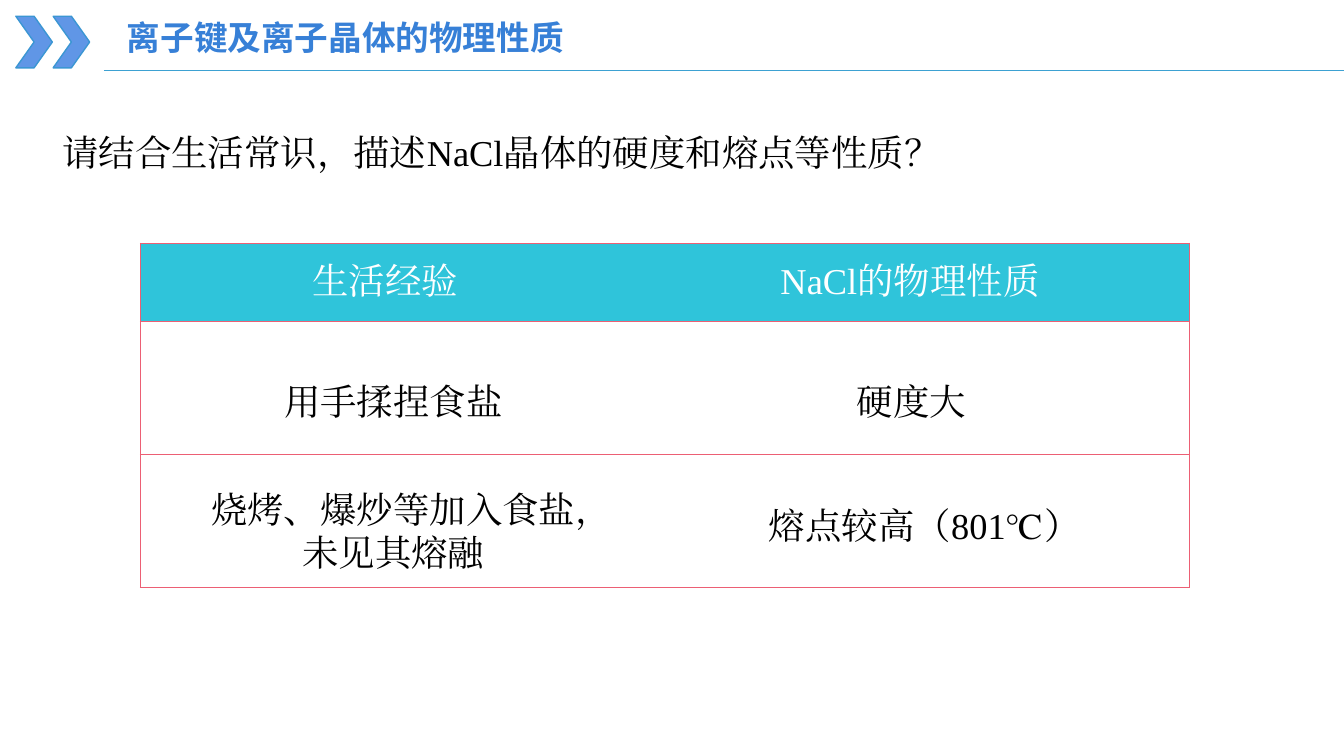
from dataclasses import dataclass

from lxml.etree import SubElement as Sub
from pptx import Presentation
from pptx.dml.color import RGBColor as Rgb
from pptx.enum.shapes import MSO_CONNECTOR as Conn, MSO_SHAPE as Shape
from pptx.enum.text import MSO_ANCHOR as Anchor, PP_ALIGN as Align
from pptx.oxml.ns import qn
from pptx.util import Cm, Pt

HUES = {
    "chevron": "6096E6", "edge": "3B96D3", "rule": "3DA1D2",
    "title": "3780D7", "head": "2FC4DA", "border": "EC5F74",
    "white": "FFFFFF", "black": "000000",
}
SERIF = "Times New Roman"
SANS = "Noto Sans CJK SC"


@dataclass
class Label:
    text: str
    left: float
    top: float
    width: float
    height: float
    align: Align = Align.LEFT
    anchor: Anchor = Anchor.TOP
    size: int = 26
    font: str = SERIF
    hue: str = "black"
    bold: bool = False


LABELS = [
    Label("请结合生活常识，描述NaCl晶体的硬度和熔点等性质？",
          1.32, 3.15, 23.01, 1.37, anchor=Anchor.MIDDLE),
    Label("用手揉捏食盐", 6.91, 9.42, 7.44, 1.37),
    Label("硬度大", 21.34, 9.42, 3.61, 1.37),
    Label("烧烤、爆炒等加入食盐，未见其熔融",
          4.72, 12.14, 10.39, 2.49, align=Align.CENTER),
    Label("熔点较高（801℃）", 19.13, 12.55, 8.41, 1.37),
    Label("离子键及离子晶体的物理性质", 2.95, 0.3, 12.75, 1.27,
          size=24, font=SANS, hue="title", bold=True),
]
HEADS = ["生活经验", "NaCl的物理性质"]
COLS = [12.37, 14.07]
ROWS = [1.98, 3.35, 3.35]


def color(name: str) -> Rgb:
    return Rgb.from_string(HUES[name])


def write(frame, text: str, *, size: int = 26, font: str = SERIF,
          hue: str = "black", bold: bool = False,
          align: Align = Align.LEFT) -> None:
    para = frame.paragraphs[0]
    para.alignment = align
    run = para.add_run()
    run.text = text
    face = run.font
    face.size, face.name, face.bold = Pt(size), font, bold
    face.color.rgb = color(hue)
    Sub(face._element, qn("a:ea"), typeface=font)


def add_label(slide, item: Label) -> None:
    box = slide.shapes.add_textbox(
        Cm(item.left), Cm(item.top), Cm(item.width), Cm(item.height))
    frame = box.text_frame
    frame.word_wrap = True
    frame.vertical_anchor = item.anchor
    write(frame, item.text, size=item.size, font=item.font,
          hue=item.hue, bold=item.bold, align=item.align)


def add_edges(cell, sides: str) -> None:
    props = cell._tc.get_or_add_tcPr()
    for side in "LRTB":
        line = Sub(props, qn(f"a:ln{side}"), w=str(Pt(0.5)))
        if side in sides:
            fill = Sub(line, qn("a:solidFill"))
            Sub(fill, qn("a:srgbClr"), val=HUES["border"])
        else:
            Sub(line, qn("a:noFill"))


def add_grid(slide) -> None:
    grid = slide.shapes.add_table(
        len(ROWS), len(COLS), Cm(3.53), Cm(6.12),
        Cm(sum(COLS)), Cm(sum(ROWS))).table
    grid.first_row = grid.horz_banding = False
    for col, width in zip(grid.columns, COLS):
        col.width = Cm(width)
    for row, height in zip(grid.rows, ROWS):
        row.height = Cm(height)
    for r in range(len(ROWS)):
        for c, head in enumerate(HEADS):
            cell = grid.cell(r, c)
            # Outer sides and row lines only, no line between columns
            add_edges(cell, "TB" + "LR"[c])
            if r:
                cell.fill.background()
                continue
            cell.fill.solid()
            cell.fill.fore_color.rgb = color("head")
            cell.vertical_anchor = Anchor.MIDDLE
            write(cell.text_frame, head, hue="white", align=Align.CENTER)


def add_banner(slide) -> None:
    for i in range(2):
        mark = slide.shapes.add_shape(
            Shape.CHEVRON, Cm(0.4 + 0.94 * i), Cm(0.41), Cm(0.92), Cm(1.3))
        mark.shadow.inherit = False
        mark.fill.solid()
        mark.fill.fore_color.rgb = color("chevron")
        mark.line.color.rgb = color("edge")
        mark.line.width = Pt(1)
    rule = slide.shapes.add_connector(
        Conn.STRAIGHT, Cm(2.62), Cm(1.78), Cm(33.87), Cm(1.78))
    rule.line.color.rgb = color("rule")
    rule.line.width = Pt(0.5)
    Sub(rule._element.spPr, qn("a:effectLst"))


def main() -> None:
    deck = Presentation()
    deck.slide_width, deck.slide_height = Cm(33.87), Cm(19.05)
    slide = deck.slides.add_slide(deck.slide_layouts[6])
    # Title band
    add_banner(slide)
    # Table, then the texts laid over it
    add_grid(slide)
    for item in LABELS:
        add_label(slide, item)
    deck.save("out.pptx")


if __name__ == "__main__":
    main()
